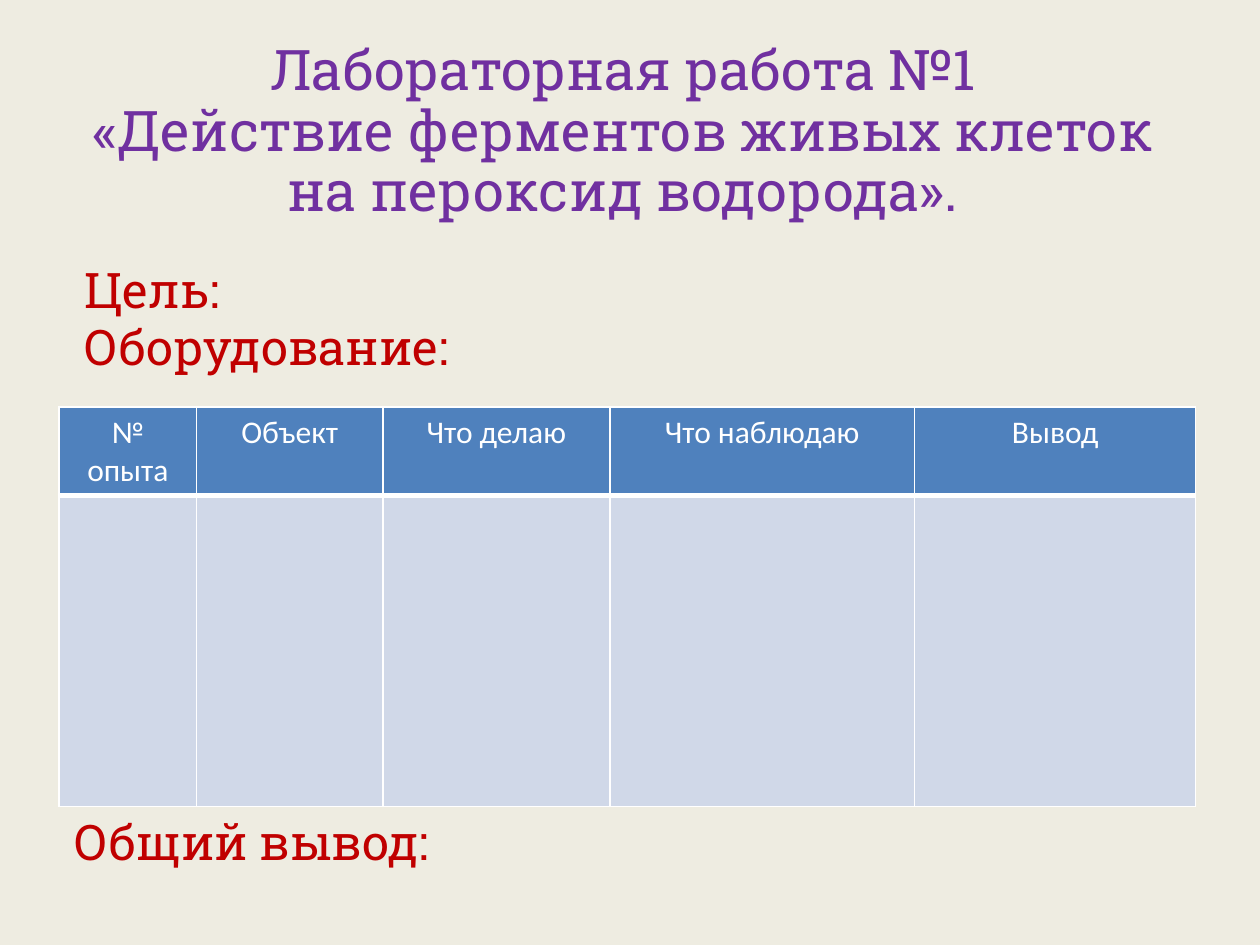
from lxml import etree
from pptx import Presentation
from pptx.dml.color import RGBColor
from pptx.enum.text import MSO_ANCHOR, PP_ALIGN
from pptx.oxml.ns import qn
from pptx.util import Inches, Pt

BACKGROUND = RGBColor(0xEE, 0xEC, 0xE1)
PURPLE = RGBColor(0x70, 0x30, 0xA0)
RED = RGBColor(0xC0, 0x00, 0x00)
WHITE = RGBColor(0xFF, 0xFF, 0xFF)
HEADER_BLUE = RGBColor(0x4F, 0x81, 0xBD)
BODY_BLUE = RGBColor(0xD0, 0xD8, 0xE8)


def write_text(frame, lines, font="Roboto Slab", size=28, color=RED,
               align=PP_ALIGN.LEFT, spacing=0.9, gap=0):
    """Write one paragraph per line with a common format."""
    frame.word_wrap = True
    for index, line in enumerate(lines):
        paragraph = frame.add_paragraph() if index else frame.paragraphs[0]
        paragraph.text = line
        paragraph.alignment = align
        paragraph.line_spacing = spacing
        if index:
            paragraph.space_before = Pt(gap)
        for run in paragraph.runs:
            run.font.name = font
            run.font.size = Pt(size)
            run.font.bold = False
            run.font.color.rgb = color


def set_borders(cell, bottom_width):
    """Draw white cell borders, placed before the cell fill."""
    properties = cell._tc.get_or_add_tcPr()
    widths = {"a:lnL": 1, "a:lnR": 1, "a:lnT": 1, "a:lnB": bottom_width}
    for position, (tag, width) in enumerate(widths.items()):
        line = etree.Element(qn(tag), w=str(Pt(width)))
        fill = etree.SubElement(line, qn("a:solidFill"))
        etree.SubElement(fill, qn("a:srgbClr"), val=str(WHITE))
        properties.insert(position, line)


presentation = Presentation()
presentation.slide_width = Inches(10)
presentation.slide_height = Inches(7.5)
slide = presentation.slides.add_slide(presentation.slide_layouts[6])
slide.background.fill.solid()
slide.background.fill.fore_color.rgb = BACKGROUND

# Title
title = slide.shapes.add_textbox(Inches(0.47), Inches(0.47), Inches(8.95), Inches(1.17))
title.text_frame.vertical_anchor = MSO_ANCHOR.MIDDLE
write_text(
    title.text_frame,
    ["Лабораторная работа №1\v«Действие ферментов живых клеток на пероксид водорода»."],
    size=32, color=PURPLE, align=PP_ALIGN.CENTER)

# Table of experiments
headers = ["№ опыта", "Объект", "Что делаю", "Что наблюдаю", "Вывод"]
column_widths = [1.09, 1.48, 1.8, 2.42, 2.23]
table = slide.shapes.add_table(2, len(headers), Inches(0.47), Inches(3.23),
                               Inches(9.02), Inches(3.17)).table
table.rows[0].height = Inches(0.7)
table.rows[1].height = Inches(2.47)
for column, (header, width) in enumerate(zip(headers, column_widths)):
    table.columns[column].width = Inches(width)
    write_text(table.cell(0, column).text_frame, [header], font="Calibri",
               size=18, color=WHITE, align=PP_ALIGN.CENTER, spacing=1)
    for row, (color, bottom_width) in enumerate([(HEADER_BLUE, 3), (BODY_BLUE, 1)]):
        cell = table.cell(row, column)
        cell.fill.solid()
        cell.fill.fore_color.rgb = color
        set_borders(cell, bottom_width)

# Red labels above and below the table
for left, top, lines in [(0.47, 2.01, ["Цель:", "Оборудование:"]),
                         (0.39, 6.39, ["Общий вывод:"])]:
    label = slide.shapes.add_textbox(Inches(left), Inches(top), Inches(9.14), Inches(1.02))
    frame = label.text_frame
    frame.margin_left = Inches(0.2)
    frame.margin_top = Inches(0.1)
    write_text(frame, lines, gap=2.5)

presentation.save("out.pptx")
